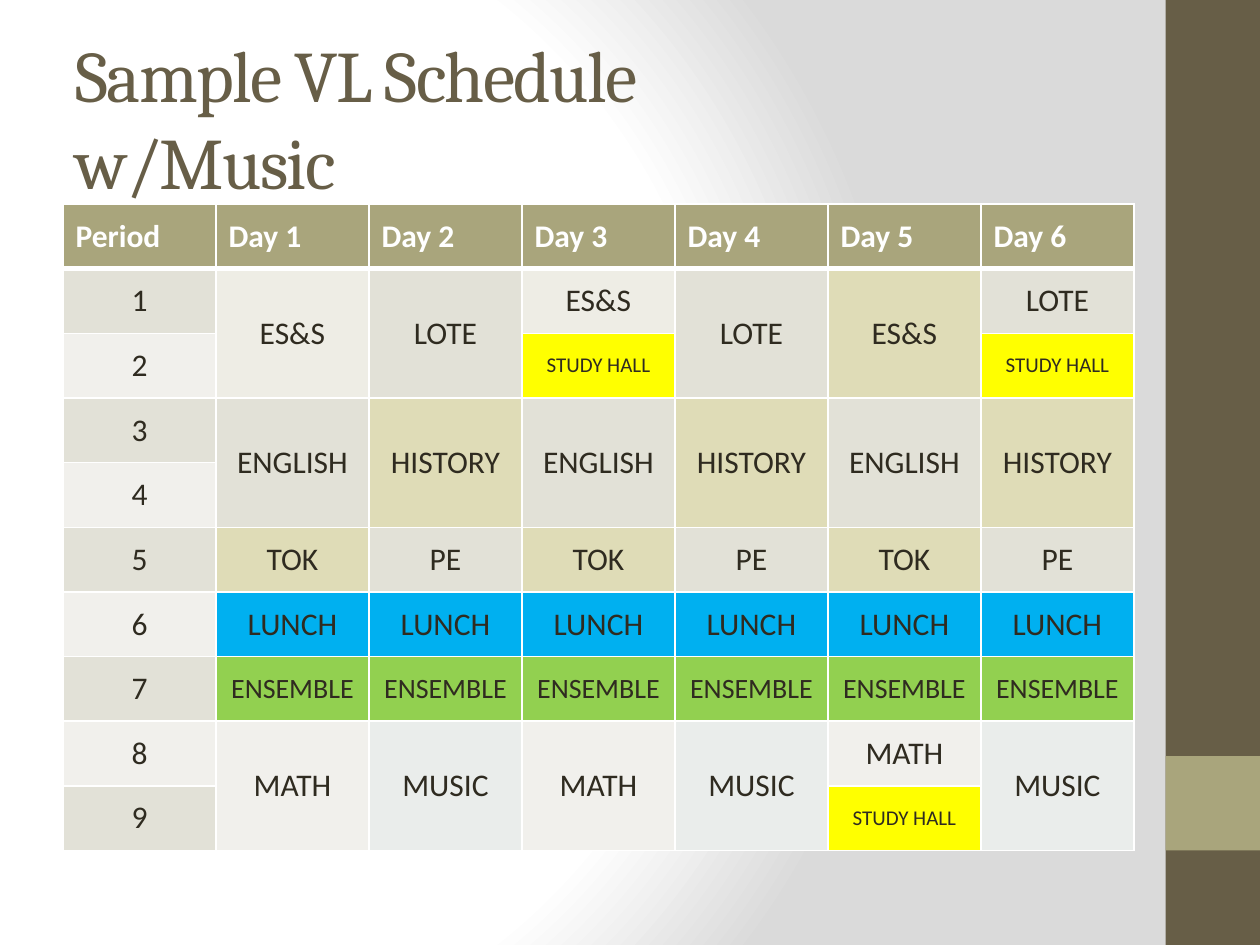
from pptx import Presentation
from pptx.dml.color import RGBColor
from pptx.enum.shapes import MSO_SHAPE
from pptx.enum.text import MSO_ANCHOR, PP_ALIGN
from pptx.oxml import parse_xml
from pptx.oxml.ns import nsdecls, qn
from pptx.util import Inches, Pt

BROWN = RGBColor(0x67, 0x5E, 0x47)
OLIVE = RGBColor(0xA9, 0xA5, 0x7C)
INK = RGBColor(0x2F, 0x2B, 0x20)
WHITE = RGBColor(0xFF, 0xFF, 0xFF)
STONE = RGBColor(0xE2, 0xE1, 0xD7)
PALE = RGBColor(0xF1, 0xF0, 0xEC)
IVORY = RGBColor(0xEE, 0xED, 0xE5)
SAND = RGBColor(0xDF, 0xDC, 0xB7)
MIST = RGBColor(0xEA, 0xED, 0xEB)
YELLOW = RGBColor(0xFF, 0xFF, 0x00)
BLUE = RGBColor(0x00, 0xB0, 0xF0)
GREEN = RGBColor(0x92, 0xD0, 0x50)

# Subject: fill and text size
SUBJECTS = {
    "ES&S": (IVORY, 18), "LOTE": (STONE, 18), "ENGLISH": (STONE, 18),
    "HISTORY": (SAND, 18), "TOK": (SAND, 18), "PE": (STONE, 18),
    "LUNCH": (BLUE, 18), "ENSEMBLE": (GREEN, 16), "MATH": (PALE, 18),
    "MUSIC": (MIST, 18), "STUDY HALL": (YELLOW, 12),
}
# Per day: what fills periods 1-2, 3-4, 5 and 8-9; a pair splits the block
DAYS = [
    (["ES&S"], "ENGLISH", "TOK", ["MATH"]),
    (["LOTE"], "HISTORY", "PE", ["MUSIC"]),
    (["ES&S", "STUDY HALL"], "ENGLISH", "TOK", ["MATH"]),
    (["LOTE"], "HISTORY", "PE", ["MUSIC"]),
    (["ES&S"], "ENGLISH", "TOK", ["MATH", "STUDY HALL"]),
    (["LOTE", "STUDY HALL"], "HISTORY", "PE", ["MUSIC"]),
]
PERIODS = 9
HIGHLIGHTED = (1, 5)  # period and day of the one sand-coloured ES&S


def set_background(s):
    s.background.fill.gradient()
    old = s.background._cSld.find(".//" + qn("a:gradFill"))
    stops = "".join(
        f'<a:gs pos="{pos * 1000}"><a:srgbClr val="{color}"/></a:gs>'
        for pos, color in ((0, "FFFFFF"), (75, "FFFFFF"), (100, "DADADA")))
    old.getparent().replace(old, parse_xml(
        f'<a:gradFill {nsdecls("a")} rotWithShape="1"><a:gsLst>{stops}</a:gsLst>'
        '<a:path path="circle"><a:fillToRect l="20000" t="50000" '
        'r="100000" b="50000"/></a:path></a:gradFill>'))


def add_block(s, x, y, w, h, color):
    sp = s.shapes.add_shape(MSO_SHAPE.RECTANGLE, x, y, w, h)
    sp.shadow.inherit = False
    sp.fill.solid()
    sp.fill.fore_color.rgb = color
    sp.line.fill.background()


def format_run(r, font, size, color, bold=False):
    r.font.name, r.font.size, r.font.bold = font, Pt(size), bold
    r.font.color.rgb = color


def set_title(s, lines):
    sp = s.shapes.title
    sp.left, sp.top, sp.width, sp.height = (
        Inches(0.5), Inches(0.3), Inches(8.33), Inches(1.25))
    tf = sp.text_frame
    tf.word_wrap = True
    tf.vertical_anchor = MSO_ANCHOR.MIDDLE
    p = tf.paragraphs[0]
    p.alignment = PP_ALIGN.LEFT
    for i, line in enumerate(lines):
        if i:
            p.add_line_break()
        r = p.add_run()
        r.text = line
        format_run(r, "Cambria", 41.4, BROWN)
        r.font._element.set("spc", "-100")


def set_borders(cell, top=1, bottom=1):
    tcPr = cell._tc.get_or_add_tcPr()
    sides = (("lnL", 1), ("lnR", 1), ("lnT", top), ("lnB", bottom))
    for i, (side, width) in enumerate(sides):
        tcPr.insert(i, parse_xml(
            f'<a:{side} {nsdecls("a")} w="{Pt(width)}"><a:solidFill>'
            f'<a:srgbClr val="{WHITE}"/></a:solidFill></a:{side}>'))


def set_cell(cell, text, fill, size=18, color=INK, bold=False,
             align=PP_ALIGN.CENTER):
    cell.text_frame.text = text
    cell.vertical_anchor = MSO_ANCHOR.MIDDLE
    cell.fill.solid()
    cell.fill.fore_color.rgb = fill
    p = cell.text_frame.paragraphs[0]
    p.alignment = align
    format_run(p.runs[0], "Calibri", size, color, bold)


def set_subjects(table, day, period, names, length):
    """Fill a block of periods with one merged subject or one subject each."""
    if len(names) < length:
        table.cell(period, day).merge(table.cell(period + length - 1, day))
    for row, name in enumerate(names, period):
        fill, size = SUBJECTS[name]
        if (row, day) == HIGHLIGHTED:
            fill = SAND
        set_cell(table.cell(row, day), name, fill, size)


def add_schedule(s):
    rows, cols = PERIODS + 1, len(DAYS) + 1
    table = s.shapes.add_table(rows, cols, Inches(0.5), Inches(1.62),
                               Inches(8.5), Inches(5.13)).table
    # Header row and period column
    headings = ["Period"] + [f"Day {d}" for d in range(1, cols)]
    for col, heading in enumerate(headings):
        set_cell(table.cell(0, col), heading, OLIVE, color=WHITE, bold=True,
                 align=PP_ALIGN.LEFT)
    for period in range(1, rows):
        set_cell(table.cell(period, 0), str(period),
                 STONE if period % 2 else PALE)
    # Subjects, day by day
    for day, (first, second, fifth, last) in enumerate(DAYS, 1):
        set_subjects(table, day, 1, first, 2)
        set_subjects(table, day, 3, [second], 2)
        set_subjects(table, day, 5, [fifth, "LUNCH", "ENSEMBLE"], 3)
        set_subjects(table, day, 8, last, 2)
    # White grid, heavier under the header
    for row in range(rows):
        for col in range(cols):
            set_borders(table.cell(row, col), top=3 if row == 1 else 1,
                        bottom=3 if row == 0 else 1)


def main():
    prs = Presentation()
    prs.slide_width, prs.slide_height = Inches(10), Inches(7.5)
    s = prs.slides.add_slide(prs.slide_layouts[5])
    set_background(s)
    # Side band with its accent square
    x, side = Inches(9.25), Inches(0.75)
    add_block(s, x, 0, side, prs.slide_height, BROWN)
    add_block(s, x, Inches(6), side, side, OLIVE)
    add_schedule(s)
    set_title(s, ["Sample VL Schedule ", "w/Music"])
    prs.save("out.pptx")


if __name__ == "__main__":
    main()
